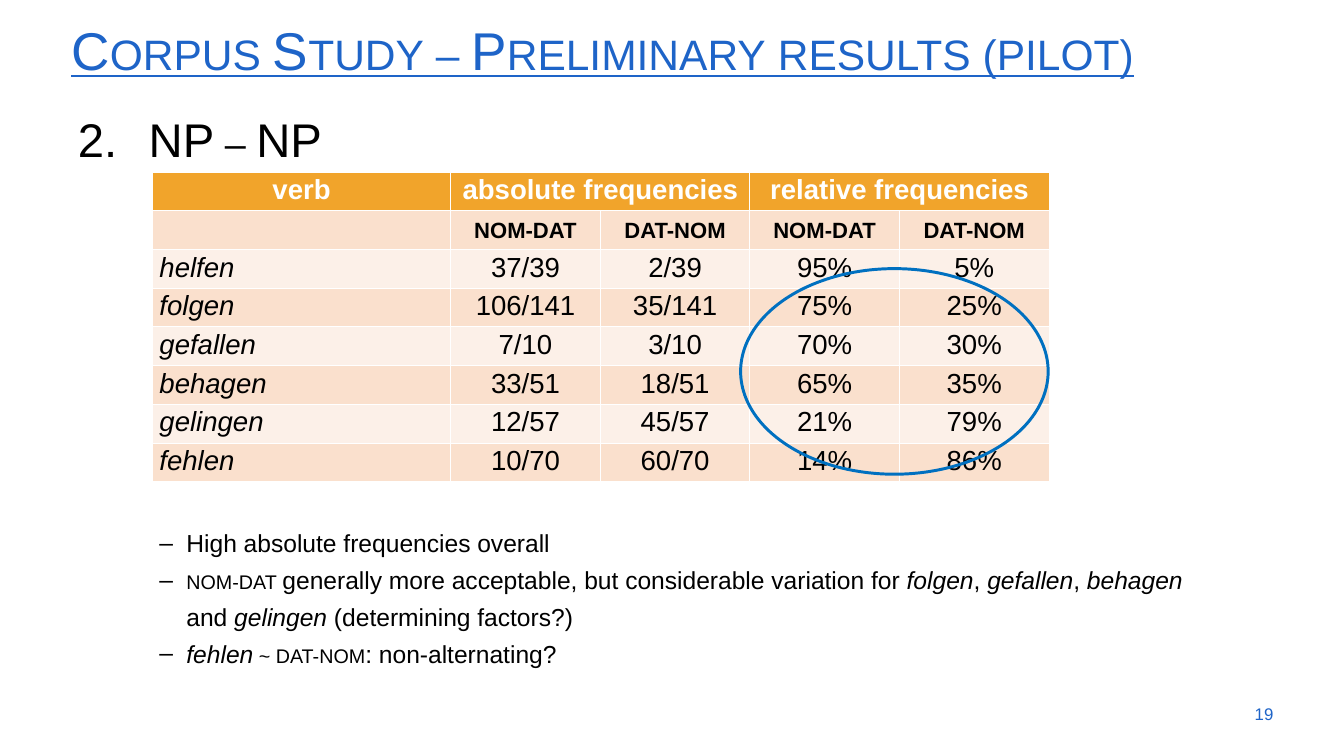
"""Build the slide with the preliminary corpus results for NP – NP."""
from dataclasses import dataclass

from lxml.etree import SubElement
from pptx import Presentation
from pptx.dml.color import RGBColor
from pptx.enum.shapes import MSO_SHAPE
from pptx.enum.text import MSO_ANCHOR, PP_ALIGN
from pptx.oxml.ns import qn
from pptx.util import Cm, Pt

FONT = "Arial"
BLUE, BLACK, WHITE = "1E64C8", "000000", "FFFFFF"
HEADER_FILL, BAND_FILLS = "F1A42B", ("FCF0E8", "FAE0CD")
CIRCLE_BLUE = "0070C0"

COLUMN_WIDTHS = (10.69, 5.36, 5.36, 5.36, 5.36)
ROW_HEIGHT = 1.35
ROWS = (
    ("verb", "absolute frequencies", "", "relative frequencies", ""),
    ("", "nom-dat", "dat-nom", "nom-dat", "dat-nom"),
    ("helfen", "37/39", "2/39", "95%", "5%"),
    ("folgen", "106/141", "35/141", "75%", "25%"),
    ("gefallen", "7/10", "3/10", "70%", "30%"),
    ("behagen", "33/51", "18/51", "65%", "35%"),
    ("gelingen", "12/57", "45/57", "21%", "79%"),
    ("fehlen", "10/70", "60/70", "14%", "86%"),
)


@dataclass(frozen=True)
class Style:
    size: float
    color: str = BLACK
    bold: bool = False
    italic: bool = False
    underline: bool = False
    small_caps: bool = False


@dataclass(frozen=True)
class Span:
    text: str
    style: Style


@dataclass(frozen=True)
class Line:
    spans: tuple[Span, ...]
    spacing: float = 1.0
    align: PP_ALIGN = PP_ALIGN.LEFT
    bullet: str = ""
    number: int = 0
    margin: float = 0
    hanging: float = 0


@dataclass(frozen=True)
class TextBox:
    left: float
    top: float
    width: float
    height: float
    lines: tuple[Line, ...]
    anchor: MSO_ANCHOR = MSO_ANCHOR.TOP


PLAIN = Style(25)
ITALIC = Style(25, italic=True)
SMALL = Style(25, small_caps=True)

FINDINGS = (
    (Span("High absolute frequencies overall", PLAIN),),
    (
        Span("nom-dat ", SMALL),
        Span("generally more acceptable, but considerable variation for ", PLAIN),
        Span("folgen", ITALIC),
        Span(", ", PLAIN),
        Span("gefallen", ITALIC),
        Span(", ", PLAIN),
        Span("behagen ", ITALIC),
        Span("and ", PLAIN),
        Span("gelingen", ITALIC),
        Span(" (determining factors?)", PLAIN),
    ),
    (Span("fehlen", ITALIC), Span(" ~ dat-nom", SMALL), Span(": non-alternating?", PLAIN)),
)

TITLE = Span("Corpus Study – Preliminary results (pilot)",
             Style(54, BLUE, underline=True, small_caps=True))
HEADING = Span("NP – NP", Style(48, small_caps=True))
PAGE_NUMBER = Span("19", Style(17.1, BLUE))

BOXES = (
    TextBox(2.31, 0.71, 43.64, 2.39, (Line((TITLE,), 0.9),), MSO_ANCHOR.MIDDLE),
    TextBox(2.31, 3.33, 43.61, 18.59,
            (Line((HEADING,), 1.25, number=2, margin=2.77, hanging=2.54),)),
    TextBox(43.31, 24.87, 2.57, 1.45,
            (Line((PAGE_NUMBER,), align=PP_ALIGN.RIGHT),), MSO_ANCHOR.MIDDLE),
    TextBox(5.46, 18.54, 37.85, 5.26,
            tuple(Line(spans, 1.25, bullet="–", margin=0.97, hanging=0.97)
                  for spans in FINDINGS)),
)


def rgb(color: str) -> RGBColor:
    return RGBColor.from_string(color)


def format_run(run, style: Style) -> None:
    font = run.font
    font.name, font.size = FONT, Pt(style.size)
    font.bold, font.italic, font.underline = style.bold, style.italic, style.underline
    font.color.rgb = rgb(style.color)
    if style.small_caps:
        run._r.get_or_add_rPr().set("cap", "small")


def add_marker(para, line: Line) -> None:
    properties = para._p.get_or_add_pPr()
    properties.set("marL", str(Cm(line.margin)))
    properties.set("indent", str(-Cm(line.hanging)))
    SubElement(properties, qn("a:buFont"), typeface=FONT)
    if line.number:
        SubElement(properties, qn("a:buAutoNum"), type="arabicPeriod", startAt=str(line.number))
    else:
        SubElement(properties, qn("a:buChar"), char=line.bullet)


def draw_text(page, item: TextBox) -> None:
    box = page.shapes.add_textbox(Cm(item.left), Cm(item.top), Cm(item.width), Cm(item.height))
    frame = box.text_frame
    frame.word_wrap = True
    frame.vertical_anchor = item.anchor
    for index, line in enumerate(item.lines):
        para = frame.add_paragraph() if index else frame.paragraphs[0]
        if line.bullet or line.number:
            add_marker(para, line)
        para.line_spacing = line.spacing
        para.alignment = line.align
        for span in line.spans:
            run = para.add_run()
            run.text = span.text
            format_run(run, span.style)


def cell_style(row: int, column: int) -> Style:
    return Style(28, WHITE if row == 0 else BLACK, bold=row < 2,
                 italic=row > 1 and column == 0, small_caps=row == 1)


def draw_table(page) -> None:
    table = page.shapes.add_table(
        len(ROWS), len(COLUMN_WIDTHS), Cm(5.46), Cm(6.17),
        Cm(sum(COLUMN_WIDTHS)), Cm(ROW_HEIGHT * len(ROWS))).table
    for column, width in zip(table.columns, COLUMN_WIDTHS):
        column.width = Cm(width)
    for row_index, texts in enumerate(ROWS):
        table.rows[row_index].height = Cm(ROW_HEIGHT)
        for column_index, text in enumerate(texts):
            cell = table.cell(row_index, column_index)
            cell.margin_top = cell.margin_bottom = Cm(0.1)
            cell.fill.solid()
            cell.fill.fore_color.rgb = rgb(BAND_FILLS[row_index % 2] if row_index else HEADER_FILL)
            if text:
                para = cell.text_frame.paragraphs[0]
                para.text = text
                is_verb = row_index > 1 and column_index == 0
                para.alignment = PP_ALIGN.LEFT if is_verb else PP_ALIGN.CENTER
                format_run(para.runs[0], cell_style(row_index, column_index))
    for first in (1, 3):
        table.cell(0, first).merge(table.cell(0, first + 1))


def draw_circle(page) -> None:
    circle = page.shapes.add_shape(MSO_SHAPE.OVAL, Cm(26.54), Cm(9.63), Cm(11.02), Cm(7.37))
    circle.shadow.inherit = False
    circle.fill.background()
    circle.line.color.rgb = rgb(CIRCLE_BLUE)
    circle.line.width = Pt(3)


def main() -> None:
    deck = Presentation()
    deck.slide_width, deck.slide_height = Cm(48.16), Cm(27.1)
    page = deck.slides.add_slide(deck.slide_layouts[6])
    for item in BOXES:
        draw_text(page, item)
    draw_table(page)
    draw_circle(page)
    deck.save("out.pptx")


if __name__ == "__main__":
    main()
